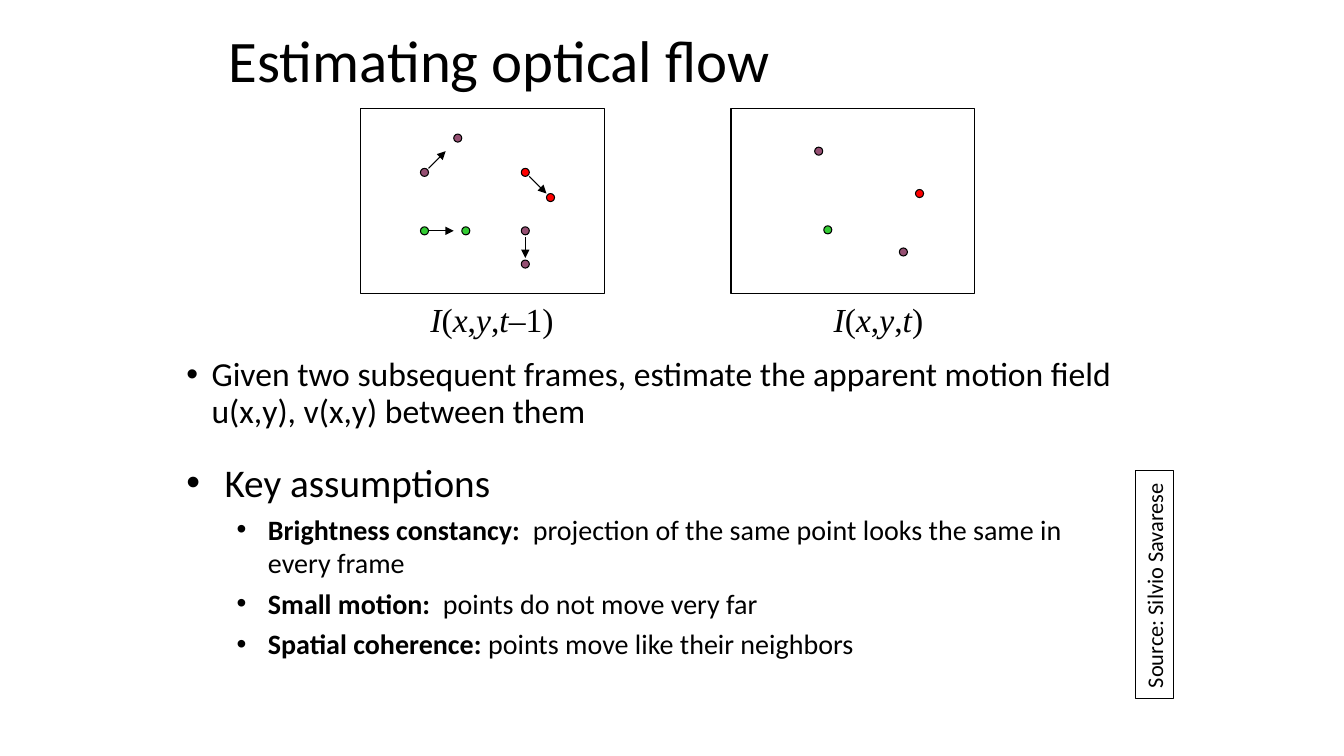
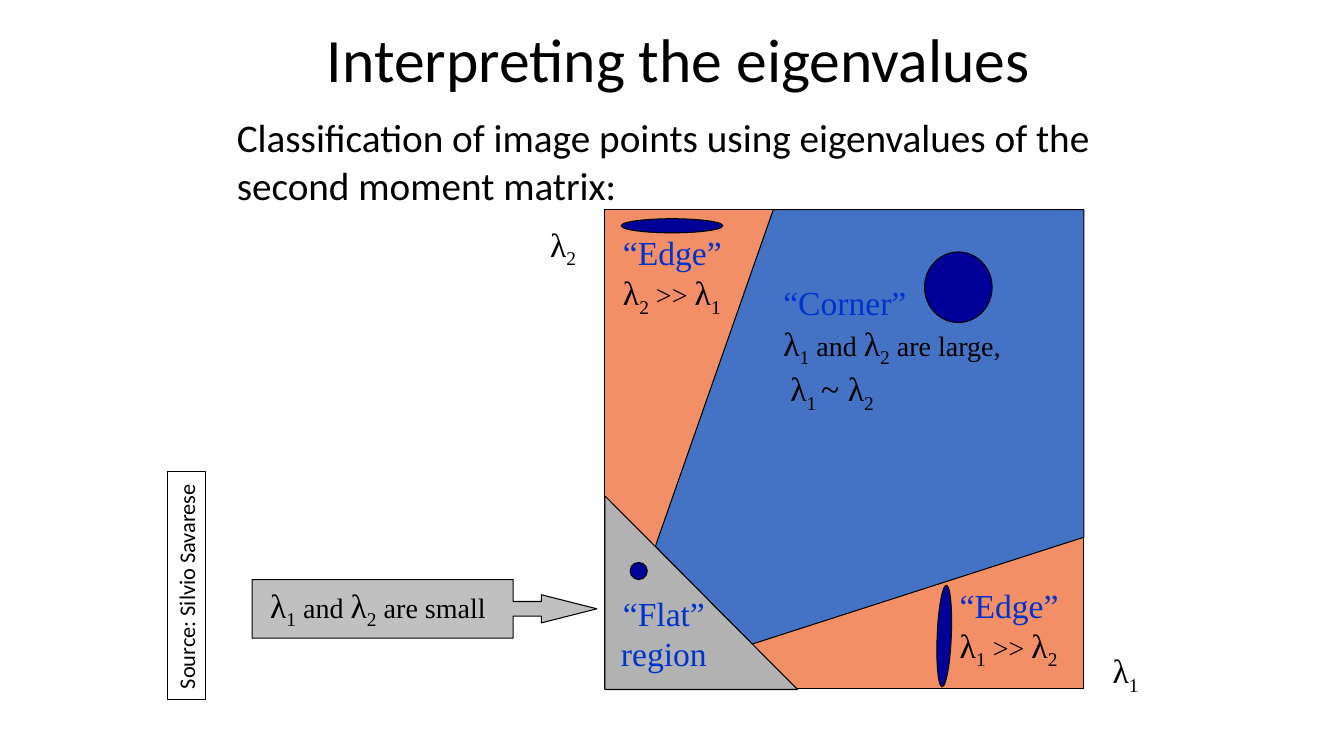
"""Build two lecture slides on optical flow and eigenvalues."""
from lxml.etree import SubElement
from pptx import Presentation
from pptx.dml.color import RGBColor
from pptx.enum.shapes import MSO_CONNECTOR as Link, MSO_SHAPE as Kind
from pptx.enum.text import MSO_ANCHOR as Anchor, MSO_AUTO_SIZE as Fit, PP_ALIGN as Align
from pptx.oxml.ns import qn
from pptx.util import Inches, Pt

BLACK = RGBColor(0x00, 0x00, 0x00)
WHITE = RGBColor(0xFF, 0xFF, 0xFF)
PLUM = RGBColor(0x95, 0x4F, 0x72)
RED = RGBColor(0xFF, 0x00, 0x00)
GREEN = RGBColor(0x33, 0xCC, 0x33)
CORAL = RGBColor(0xF3, 0x8F, 0x67)
BLUE = RGBColor(0x44, 0x72, 0xC4)
INK = RGBColor(0x00, 0x33, 0xCC)
NAVY = RGBColor(0x00, 0x00, 0x99)
GRAY = RGBColor(0xB2, 0xB2, 0xB2)
SILVER = RGBColor(0xC0, 0xC0, 0xC0)
SANS, SERIF = "Calibri", "Times New Roman"

SOURCE = "Source: Silvio Savarese"
DOT = 0.08
FRAMES = [(3.58, 1.08, 2.42, 1.83), (7.25, 1.08, 2.42, 1.83)]
DOTS = [
    (PLUM, [(4.17, 1.67), (4.5, 1.33), (8.08, 1.46)]),
    (RED, [(5.17, 1.67), (5.42, 1.92), (9.08, 1.88)]),
    (GREEN, [(4.17, 2.25), (4.58, 2.25), (8.17, 2.24)]),
    (PLUM, [(5.17, 2.25), (5.17, 2.58), (8.92, 2.46)]),
]
ARROWS = [
    (4.25, 1.67, 4.42, 1.5),
    (4.25, 2.29, 4.5, 2.29),
    (5.25, 1.75, 5.42, 1.92),
    (5.21, 2.35, 5.21, 2.56),
]
IMAGE = [("I", "i"), ("(", ""), ("x", "i"), (",", ""), ("y", "i"), (",", ""), ("t", "i")]
LABELS = [
    ((4.17, 2.92, 1.42, 0.5), IMAGE + [("–1)", "")]),
    ((8.17, 2.92, 1.09, 0.5), IMAGE + [(")", "")]),
]
GOAL = "Given two subsequent frames, estimate the apparent motion field u(x,y), v(x,y) between them"
KEYS = [
    ("Brightness constancy:  ", "projection of the same point looks the same in every frame"),
    ("Small motion:", "  points do not move very far"),
    ("Spatial coherence:", " points move like their neighbors"),
]

LEAD = "Classification of image points using eigenvalues of the second moment matrix:"
PLOT = (6, 2.08, 4.75, 4.75)
CORNER = [(6.5, 5.42), (7.67, 2.08), (10.75, 2.08), (10.75, 5.33), (7.46, 6.39)]
ONE = [("λ", ""), ("1", "s")]
TWO = [("λ", ""), ("2", "s")]
BOTH = ONE + [(" and ", "m")] + TWO
MORE = [(" >> ", "m")]
BREAK = [("\n", "")]
AXES = [((10.75, 6.4, 0.83, 0.5), ONE), ((5, 2.17, 1.17, 0.5), TWO)]
NOTES = [
    ((7.67, 2.75, 2.92, 1.31), [("“Corner”", "h")] + BREAK + BOTH + [(" are large,", "m")]
     + BREAK + [(" ", "m"), ("λ", ""), ("1 ", "s"), ("~ ", "")] + TWO),
    ((2.58, 5.75, 2.58, 0.5), BOTH + [(" are small", "m")]),
    ((9.42, 5.75, 1.42, 0.91), [("“Edge”", "h")] + BREAK + ONE + MORE + TWO),
    ((6.08, 2.25, 1.42, 0.91), [("“Edge”", "h")] + BREAK + TWO + MORE + ONE),
]
FLAT = ((5.92, 5.83, 1.33, 0.91), [("“Flat” region", "h")])
BLOBS = [
    ((9.17, 2.5, 0.67, 0.7), 0),
    ((6.16, 2.17, 1.01, 0.14), 0),
    ((6.25, 5.58, 0.17, 0.17), 0),
    ((8.86, 6.24, 1.01, 0.14), 92.4),
]


def edge(line):
    line.color.rgb = BLACK
    line.width = Pt(0.75)


def paint(shape, fill):
    shape.shadow.inherit = False
    shape.fill.solid()
    shape.fill.fore_color.rgb = fill
    edge(shape.line)
    return shape


def draw(slide, kind, at, fill):
    return paint(slide.shapes.add_shape(kind, *map(Inches, at)), fill)


def arrow(slide, ends):
    link = slide.shapes.add_connector(Link.STRAIGHT, *map(Inches, ends))
    edge(link.line)
    SubElement(link.line._get_or_add_ln(), qn("a:tailEnd"), type="triangle")
    SubElement(link._element.spPr, qn("a:effectLst"))


def write(para, runs, size, face):
    for text, style in runs:
        if text == "\n":
            para.add_line_break()
            continue
        run = para.add_run()
        run.text = text
        font = run.font
        font.name = face
        font.size = Pt(20 if style == "m" else size)
        font.bold = style == "b"
        font.italic = style == "i"
        font.color.rgb = INK if style == "h" else BLACK
        if style == "s":
            font._element.set("baseline", "-25000")


def bullet(para, left, hang):
    props = para._p.get_or_add_pPr()
    props.set("marL", str(Inches(left)))
    props.set("indent", str(-Inches(hang)))
    SubElement(props, qn("a:buFont"), typeface="Arial")
    SubElement(props, qn("a:buChar"), char="•")


def label(slide, at, runs, size=24, face=SERIF, align=Align.LEFT, wrap=True):
    box = slide.shapes.add_textbox(*map(Inches, at))
    frame = box.text_frame
    frame.word_wrap = wrap
    frame.auto_size = Fit.NONE if wrap else Fit.SHAPE_TO_FIT_TEXT
    para = frame.paragraphs[0]
    para.alignment = align
    write(para, runs, size, face)
    return box


def start(deck, text, left, width, size):
    slide = deck.slides.add_slide(deck.slide_layouts[5])
    title = slide.shapes.title
    title.left, title.top = Inches(left), Inches(0)
    title.width, title.height = Inches(width), Inches(1.25)
    frame = title.text_frame
    frame.vertical_anchor = Anchor.MIDDLE
    frame.auto_size = Fit.NONE
    para = frame.paragraphs[0]
    para.alignment = Align.LEFT
    para.line_spacing = 0.9
    write(para, [(text, "")], size, SANS)
    return slide


def credit(slide, left, top):
    box = label(slide, (left, top, 2.26, 0.37), [(SOURCE, "")], 16, SANS, wrap=False)
    box.rotation = 270
    edge(box.line)


def flow(deck):
    slide = start(deck, "Estimating optical flow", 2.17, 9, 42)
    for at in FRAMES:
        draw(slide, Kind.RECTANGLE, at, WHITE)
    for ends in ARROWS:
        arrow(slide, ends)
    for fill, spots in DOTS:
        for x, y in spots:
            draw(slide, Kind.OVAL, (x, y, DOT, DOT), fill)
    for at, runs in LABELS:
        label(slide, at, runs, wrap=False)

    goal = label(slide, (1.75, 3.5, 9.75, 1.08), [(GOAL, "")], face=SANS)
    para = goal.text_frame.paragraphs[0]
    para.line_spacing = 0.9
    bullet(para, 0.25, 0.25)

    keys = label(slide, (1.75, 4.5, 9, 2.42), [("Key assumptions", "")], 28, SANS)
    bullet(keys.text_frame.paragraphs[0], 0.38, 0.38)
    for name, text in KEYS:
        para = keys.text_frame.add_paragraph()
        para.level = 1
        para.space_before = Pt(4.8)
        bullet(para, 0.81, 0.31)
        write(para, [(name, "b"), (text, "")], 20, SANS)
    credit(slide, 10.32, 5.61)


def eigen(deck):
    slide = start(deck, "Interpreting the eigenvalues", 3.14, 8.03, 44)
    call = draw(slide, Kind.RIGHT_ARROW_CALLOUT, (2.5, 5.75, 3.42, 0.58), SILVER)
    for i, part in enumerate((0.25, 0.241, 0.95, 0.757)):
        call.adjustments[i] = part
    draw(slide, Kind.RECTANGLE, PLOT, CORAL)
    points = [(Inches(x), Inches(y)) for x, y in CORNER]
    path = slide.shapes.build_freeform(*points[0])
    path.add_line_segments(points[1:], close=True)
    paint(path.convert_to_shape(), BLUE)
    draw(slide, Kind.RIGHT_TRIANGLE, (6, 4.92, 1.91, 1.92), GRAY)

    for at, runs in AXES + [FLAT]:
        label(slide, at, runs, align=Align.CENTER)
    for at, runs in NOTES:
        label(slide, at, runs)
    label(slide, (2.25, 1.08, 8.75, 1.03), [(LEAD, "")], 28, SANS)
    for at, turn in BLOBS:
        draw(slide, Kind.OVAL, at, NAVY).rotation = turn
    credit(slide, 0.72, 5.62)


def main():
    deck = Presentation()
    deck.slide_width, deck.slide_height = Inches(13.33), Inches(7.5)
    flow(deck)
    eigen(deck)
    deck.save("out.pptx")


if __name__ == "__main__":
    main()
